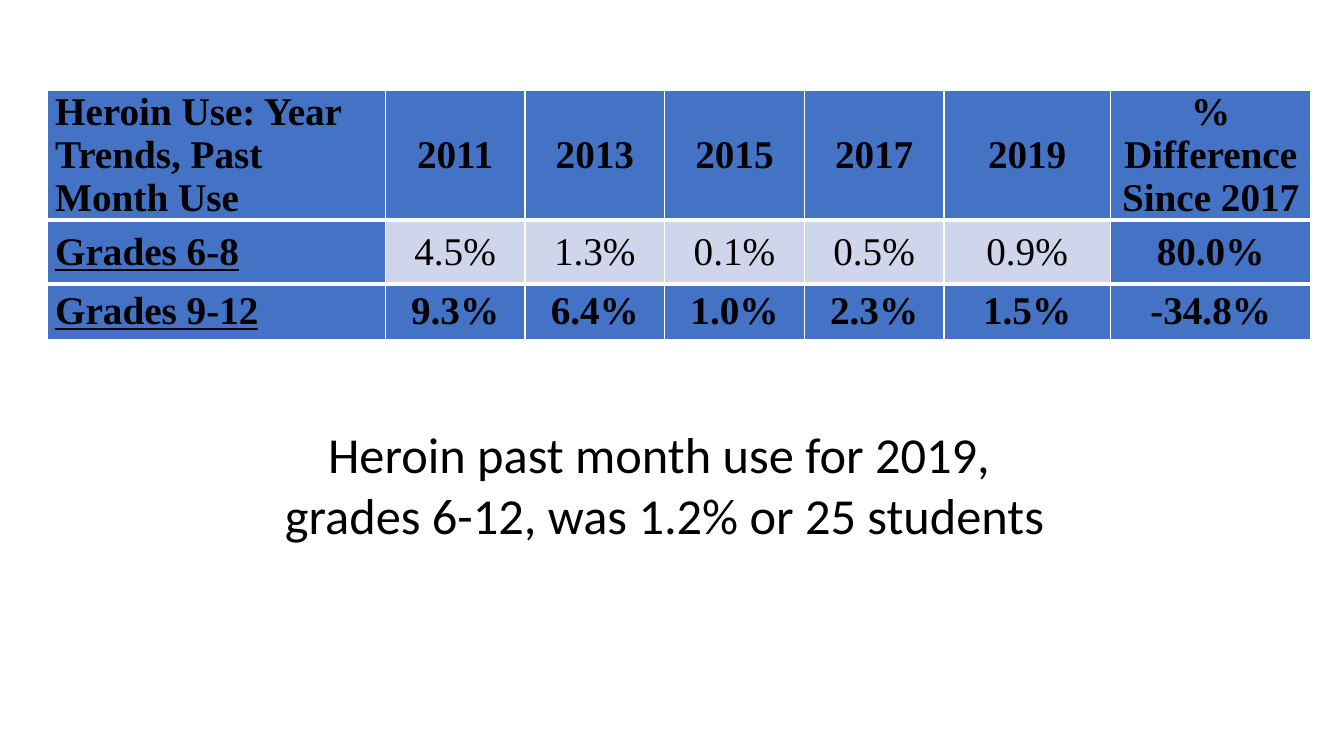
from lxml import etree
from pptx import Presentation
from pptx.dml.color import RGBColor
from pptx.enum.text import MSO_ANCHOR, MSO_AUTO_SIZE, PP_ALIGN
from pptx.oxml.ns import qn
from pptx.util import Cm, Pt

LEFT, CENTER = PP_ALIGN.LEFT, PP_ALIGN.CENTER
MIDDLE = MSO_ANCHOR.MIDDLE
GROW = MSO_AUTO_SIZE.SHAPE_TO_FIT_TEXT

BLUE, PALE, WHITE, BLACK = "4472C4", "CFD5EA", "FFFFFF", "000000"
THIN, THICK = 1, 3

COLUMN_WIDTHS = [8.51] + [3.52] * 4 + [4.19, 5.06]
ROW_HEIGHTS = [3.28, 1.6, 1.4]
TREND_ROWS = [
    ["Heroin Use: Year Trends, Past Month Use", "2011", "2013", "2015",
     "2017", "2019", "% Difference\nSince 2017"],
    ["Grades 6-8", "4.5%", "1.3%", "0.1%", "0.5%", "0.9%", "80.0%"],
    ["Grades 9-12", "9.3%", "6.4%", "1.0%", "2.3%", "1.5%", "-34.8%"],
]
SUMMARY = ("Heroin past month use for 2019, \n"
           "grades 6-12, was 1.2% or 25 students")


def color(hex_value):
    return RGBColor.from_string(hex_value)


def write_text(frame, text, font="Calibri", size=18, bold=False,
               underline=False, align=LEFT, fill=BLACK):
    """Fill a text frame, one paragraph for each line of the text."""
    for index, line in enumerate(text.split("\n")):
        paragraph = frame.paragraphs[0] if index == 0 else frame.add_paragraph()
        paragraph.alignment = align
        run = paragraph.add_run()
        run.text = line
        run.font.name = font
        run.font.size = Pt(size)
        run.font.bold = bold
        run.font.underline = underline
        run.font.color.rgb = color(fill)


def set_borders(cell, top, bottom):
    """Draw white cell borders; they come before the fill in the cell XML."""
    properties = cell._tc.get_or_add_tcPr()
    widths = {"a:lnL": THIN, "a:lnR": THIN, "a:lnT": top, "a:lnB": bottom}
    for position, (tag, width) in enumerate(widths.items()):
        line = etree.Element(qn(tag), w=str(Pt(width)))
        solid = etree.SubElement(line, qn("a:solidFill"))
        etree.SubElement(solid, qn("a:srgbClr"), val=WHITE)
        properties.insert(position, line)


def format_cell(cell, fill, top, bottom):
    cell.vertical_anchor = MIDDLE
    cell.margin_left = cell.margin_right = Cm(0.19)
    cell.margin_top = cell.margin_bottom = 0
    cell.fill.solid()
    cell.fill.fore_color.rgb = color(fill)
    set_borders(cell, top, bottom)


def add_trend_table(slide, left, top):
    last_row, last_column = len(ROW_HEIGHTS) - 1, len(COLUMN_WIDTHS) - 1
    table = slide.shapes.add_table(
        len(ROW_HEIGHTS), len(COLUMN_WIDTHS), Cm(left), Cm(top),
        Cm(sum(COLUMN_WIDTHS)), Cm(sum(ROW_HEIGHTS))).table
    for column, width in zip(table.columns, COLUMN_WIDTHS):
        column.width = Cm(width)
    for row, height in zip(table.rows, ROW_HEIGHTS):
        row.height = Cm(height)

    for r, texts in enumerate(TREND_ROWS):
        for c, text in enumerate(texts):
            cell = table.cell(r, c)
            # Only the yearly values of the younger grades are pale and regular
            plain = r == 1 and 0 < c < last_column
            format_cell(cell, PALE if plain else BLUE,
                        top=THIN if r == 0 else THICK,
                        bottom=THIN if r == last_row else THICK)
            write_text(cell.text_frame, text, font="Times New Roman", size=28,
                       bold=not plain, underline=r > 0 and c == 0,
                       align=CENTER if c else LEFT)


def add_text_box(slide, left, top, width, height, text, **text_format):
    box = slide.shapes.add_textbox(Cm(left), Cm(top), Cm(width), Cm(height))
    box.text_frame.word_wrap = True
    box.text_frame.auto_size = GROW
    write_text(box.text_frame, text, **text_format)


def main():
    presentation = Presentation()
    presentation.slide_width = Cm(33.87)
    presentation.slide_height = Cm(19.05)
    slide = presentation.slides.add_slide(presentation.slide_layouts[6])

    # Yearly trends by grade group
    add_trend_table(slide, 1.2, 2.27)

    # Summary sentence
    add_text_box(slide, 5.21, 10.54, 23.09, 3.33, SUMMARY, size=36, align=CENTER)

    presentation.save("out.pptx")


if __name__ == "__main__":
    main()
